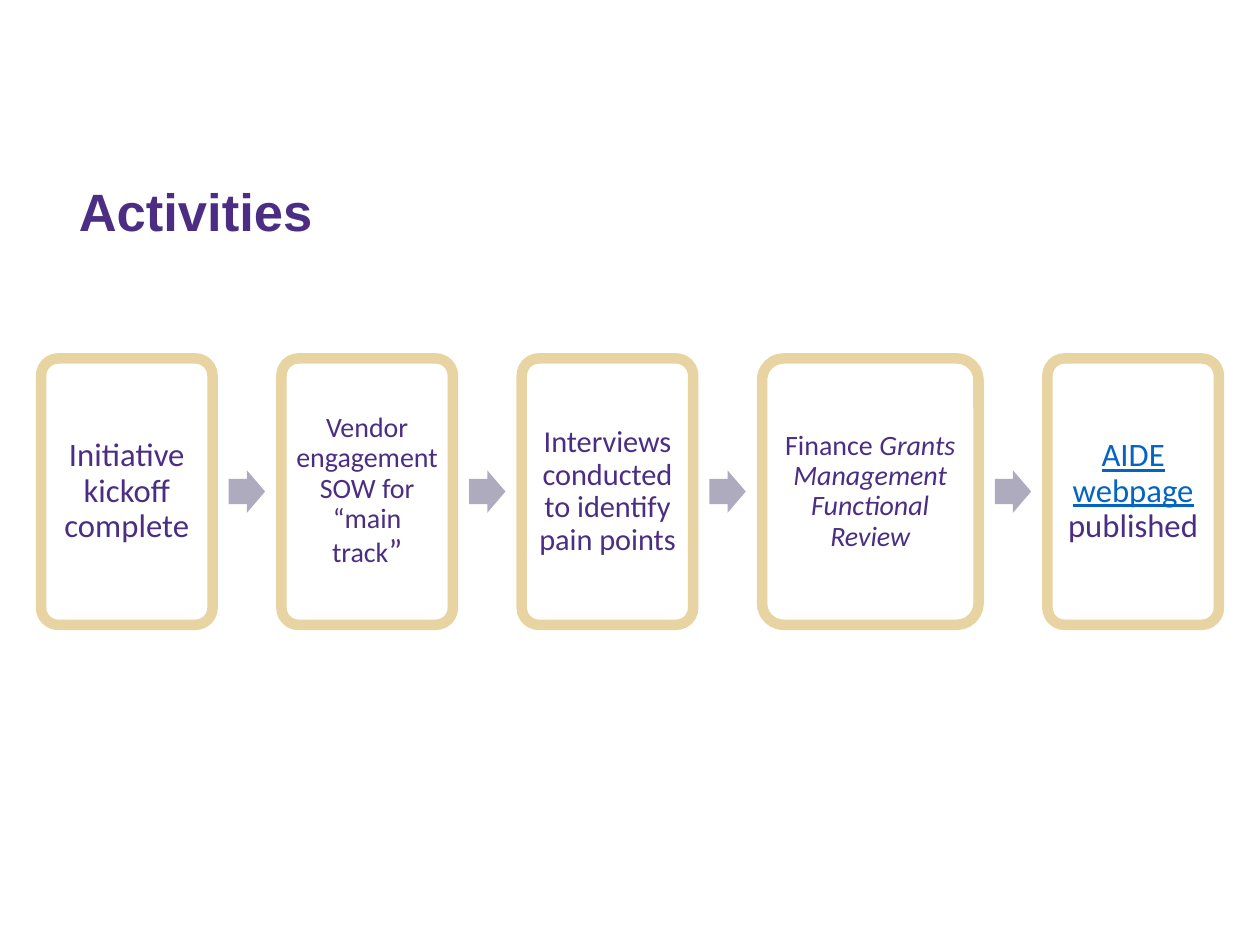
"""Build a slide with a five-step flow of activities."""
from dataclasses import dataclass

from pptx import Presentation
from pptx.dml.color import RGBColor
from pptx.enum.shapes import MSO_SHAPE as Preset
from pptx.enum.text import MSO_ANCHOR as Anchor, PP_ALIGN as Align
from pptx.shapes.autoshape import Shape
from pptx.slide import Slide
from pptx.text.text import TextFrame
from pptx.util import Pt


@dataclass(frozen=True)
class Theme:
    """Colours, fonts and type sizes of the slide."""
    purple: str = "4B2E83"
    gold: str = "E8D3A2"
    grey: str = "AFABBF"
    link: str = "0563C1"
    title_font: str = "Arial"
    body_font: str = "Calibri"
    title_size: float = 22.5
    large: float = 14
    medium: float = 13
    small: float = 12


@dataclass(frozen=True)
class Span:
    """A stretch of text with its own format."""
    text: str
    size: float
    color: str = "4B2E83"
    italic: bool = False
    underline: bool = False


@dataclass(frozen=True)
class Step:
    """One box of the flow."""
    spans: tuple[Span, ...]
    inset: float
    width: float = 73.5


THEME = Theme()
FLOW_LEFT, FLOW_TOP, FLOW_HEIGHT = 17.6, 153.6, 114.2
GAP, ARROW_WIDTH, ARROW_HEIGHT = 29.5, 15.6, 18.2

STEPS = (
    Step((Span("Initiative kickoff complete", THEME.large),), 4.2),
    Step((Span("Vendor engagement SOW for “main track", THEME.small),
          Span("”", THEME.large)), 3.6),
    Step((Span("Interviews conducted to identify pain points", THEME.medium),), 3.9),
    Step((Span("Finance ", THEME.small),
          Span("Grants Management Functional Review", THEME.small, italic=True)),
         3.6, width=92.8),
    Step((Span("AIDE webpage", THEME.large, THEME.link, underline=True),
          Span(" published", THEME.large)), 4.2),
)


def add_text(frame: TextFrame, text: str, *, size: float, color: str, font: str,
             bold: bool = False, italic: bool = False, underline: bool = False) -> None:
    """Append a formatted run to the first paragraph of a frame."""
    run = frame.paragraphs[0].add_run()
    run.text = text
    run.font.name, run.font.size = font, Pt(size)
    run.font.bold, run.font.italic, run.font.underline = bold, italic, underline
    run.font.color.rgb = RGBColor.from_string(color)


def set_frame(frame: TextFrame, anchor: Anchor, horizontal: float, vertical: float) -> None:
    """Set wrapping, anchor and insets of a text frame."""
    frame.word_wrap = True
    frame.vertical_anchor = anchor
    frame.margin_left = frame.margin_right = Pt(horizontal)
    frame.margin_top = frame.margin_bottom = Pt(vertical)


def add_preset(slide: Slide, preset: Preset, left: float, top: float,
               width: float, height: float, adjustments: tuple[float, ...]) -> Shape:
    """Add a preset shape without a shadow."""
    shape = slide.shapes.add_shape(preset, Pt(left), Pt(top), Pt(width), Pt(height))
    shape.shadow.inherit = False
    for index, value in enumerate(adjustments):
        shape.adjustments[index] = value
    return shape


def add_title(slide: Slide, text: str) -> None:
    """Add the slide title."""
    box = slide.shapes.add_textbox(Pt(28.8), Pt(81.4), Pt(491.8), Pt(25.2))
    set_frame(box.text_frame, Anchor.BOTTOM, 5, 2.9)
    add_text(box.text_frame, text, size=THEME.title_size, color=THEME.purple,
             font=THEME.title_font, bold=True)


def add_step(slide: Slide, step: Step, left: float) -> None:
    """Add one outlined box with its text."""
    shape = add_preset(slide, Preset.ROUNDED_RECTANGLE, left, FLOW_TOP,
                       step.width, FLOW_HEIGHT, (0.1,))
    shape.fill.background()
    shape.line.color.rgb = RGBColor.from_string(THEME.gold)
    shape.line.width = Pt(4.5)
    frame = shape.text_frame
    set_frame(frame, Anchor.MIDDLE, step.inset, step.inset)
    frame.paragraphs[0].alignment = Align.CENTER
    frame.paragraphs[0].line_spacing = 0.9
    for span in step.spans:
        add_text(frame, span.text, size=span.size, color=span.color,
                 font=THEME.body_font, italic=span.italic, underline=span.underline)


def add_arrow(slide: Slide, gap_left: float) -> None:
    """Add the arrow centred in the gap after a box."""
    shape = add_preset(slide, Preset.RIGHT_ARROW, gap_left + (GAP - ARROW_WIDTH) / 2,
                       FLOW_TOP + (FLOW_HEIGHT - ARROW_HEIGHT) / 2,
                       ARROW_WIDTH, ARROW_HEIGHT, (0.6, 0.5))
    shape.fill.solid()
    shape.fill.fore_color.rgb = RGBColor.from_string(THEME.grey)
    shape.line.fill.background()


def main() -> None:
    """Build and save the presentation."""
    presentation = Presentation()
    presentation.slide_width, presentation.slide_height = Pt(540), Pt(405)
    slide = presentation.slides.add_slide(presentation.slide_layouts[6])
    add_title(slide, "Activities")
    left = FLOW_LEFT
    for step in STEPS:
        if left > FLOW_LEFT:
            add_arrow(slide, left - GAP)
        add_step(slide, step, left)
        left += step.width + GAP
    presentation.save("out.pptx")


if __name__ == "__main__":
    main()
